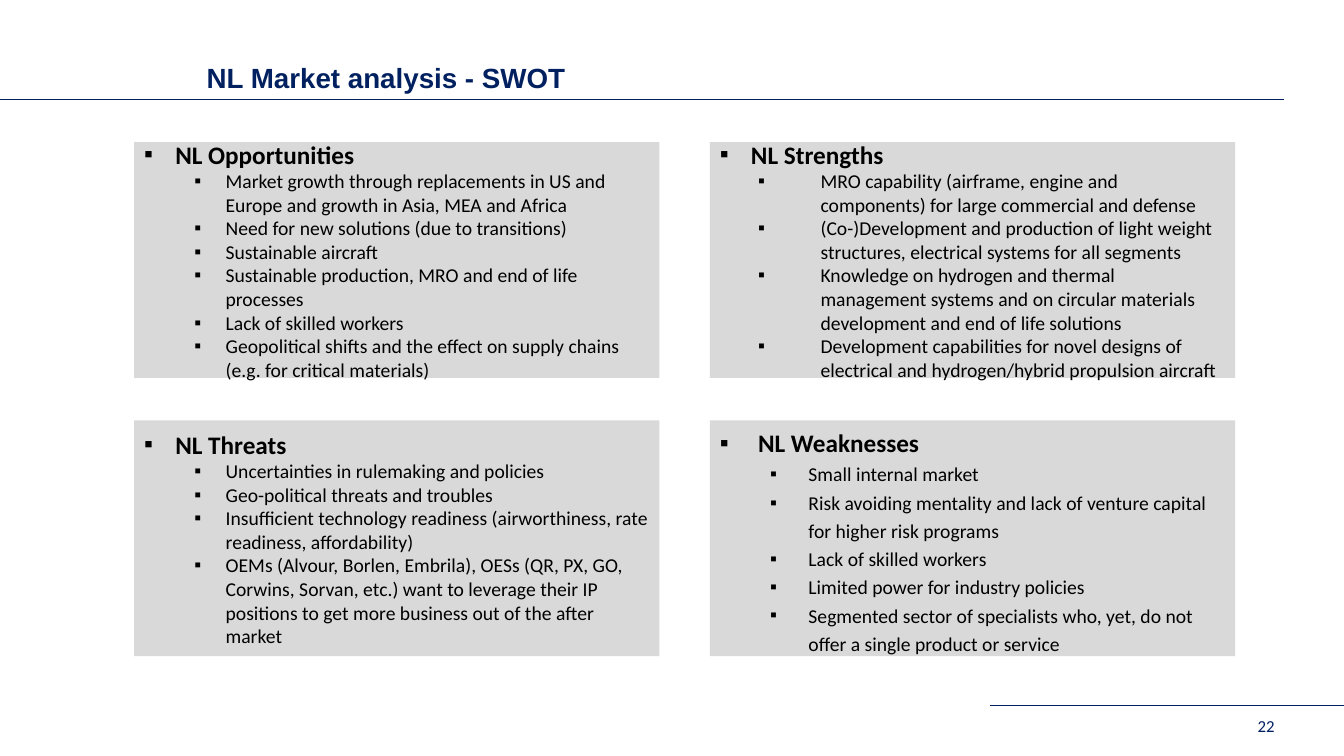
from pptx import Presentation
from pptx.dml.color import RGBColor
from pptx.enum.shapes import MSO_CONNECTOR, MSO_SHAPE
from pptx.enum.text import MSO_ANCHOR, MSO_AUTO_SIZE, PP_ALIGN
from pptx.oxml.ns import qn
from pptx.util import Inches, Pt
from lxml.etree import SubElement
from dataclasses import dataclass


@dataclass(frozen=True)
class Theme:
    navy: str = "002060"
    grey: str = "D9D9D9"
    black: str = "000000"
    title: float = 19.8
    head: float = 18
    body: float = 14
    page: float = 12
    sans: str = "Arial"
    text: str = "Calibri"


THEME = Theme()
TITLE = "NL Market analysis - SWOT"
PAGE = "22"
RULES = [(-0.03, 0.99, 12.74), (9.82, 7, 13.33)]
HEAD = (0, 0.31, 0.31)
WIDE = (0, 0.38, 0.38)
PANELS = [
    ("NL Opportunities", HEAD, (1, 0.81, 0.31), 1, [
        "Market growth through replacements in US and Europe and growth in Asia, MEA and Africa",
        "Need for new solutions (due to transitions)",
        "Sustainable aircraft",
        "Sustainable production, MRO and end of life processes",
        "Lack of skilled workers",
        "Geopolitical shifts and the effect on supply chains (e.g. for critical materials)",
    ]),
    ("NL Strengths", HEAD, (0, 1, 0.62), 1, [
        "MRO capability (airframe, engine and components) for large commercial and defense",
        "(Co-)Development and production of light weight structures, electrical systems for all segments",
        "Knowledge on hydrogen and thermal management systems and on circular materials "
        "development and end of life solutions",
        "Development capabilities for novel designs of electrical and hydrogen/hybrid propulsion aircraft",
    ]),
    ("NL Threats", HEAD, (1, 0.81, 0.31), 1, [
        "Uncertainties in rulemaking and policies",
        "Geo-political threats and troubles",
        "Insufficient technology readiness (airworthiness, rate readiness, affordability)",
        "OEMs (Alvour, Borlen, Embrila), OESs (QR, PX, GO, Corwins, Sorvan, etc.) want to leverage "
        "their IP positions to get more business out of the after market",
    ]),
    ("NL Weaknesses", WIDE, (1, 0.88, 0.38), 1.2, [
        "Small internal market",
        "Risk avoiding mentality and lack of venture capital for higher risk programs",
        "Lack of skilled workers",
        "Limited power for industry policies",
        "Segmented sector of specialists who, yet, do not offer a single product or service",
    ]),
]
LEFT, TOP = 1.33, 1.41
WIDTH, HEIGHT = 5.21, 2.34
STEP_X, STEP_Y = 5.71, 2.76


def write(para, text, size, color, font, bold=False):
    """Add one styled run to a paragraph."""
    run = para.add_run()
    run.text = text
    run.font.size = Pt(size)
    run.font.name = font
    run.font.bold = bold
    run.font.color.rgb = RGBColor.from_string(color)


def bullet(para, indent, space):
    """Give a paragraph a square bullet with a hanging indent."""
    level, margin, hang = indent
    para.level = level
    para.alignment = PP_ALIGN.LEFT
    props = para._p.get_or_add_pPr()
    props.set("marL", str(Inches(margin)))
    props.set("indent", str(-Inches(hang)))
    SubElement(props, qn("a:buFont")).set("typeface", THEME.sans)
    SubElement(props, qn("a:buChar")).set("char", "▪")
    para.line_spacing = float(space)


def panel(slide, spot, data):
    """Draw one grey box with its heading and points."""
    head, outer, inner, space, points = data
    row, col = divmod(spot, 2)
    box = slide.shapes.add_shape(
        MSO_SHAPE.RECTANGLE, Inches(LEFT + col * STEP_X), Inches(TOP + row * STEP_Y),
        Inches(WIDTH), Inches(HEIGHT))
    box.shadow.inherit = False
    box.fill.solid()
    box.fill.fore_color.rgb = RGBColor.from_string(THEME.grey)
    box.line.fill.background()
    frame = box.text_frame
    frame.word_wrap = True
    frame.vertical_anchor = MSO_ANCHOR.MIDDLE
    para = frame.paragraphs[0]
    bullet(para, outer, space)
    write(para, head, THEME.head, THEME.black, THEME.text, True)
    for point in points:
        para = frame.add_paragraph()
        bullet(para, inner, space)
        write(para, point, THEME.body, THEME.black, THEME.text)


def rule(slide, start, y, end):
    """Draw one thin horizontal line."""
    line = slide.shapes.add_connector(
        MSO_CONNECTOR.STRAIGHT, Inches(start), Inches(y), Inches(end), Inches(y))
    line.line.color.rgb = RGBColor.from_string(THEME.navy)
    line.line.width = Pt(1)
    SubElement(line._element.spPr, qn("a:effectLst"))


def label(shape, text, size, font, align, bold=False):
    """Fill a one-line text shape."""
    frame = shape.text_frame
    frame.word_wrap = True
    frame.auto_size = MSO_AUTO_SIZE.NONE
    frame.vertical_anchor = MSO_ANCHOR.MIDDLE
    para = frame.paragraphs[0]
    para.alignment = align
    write(para, text, size, THEME.navy, font, bold)
    return para


def main():
    """Build and save the slide."""
    deck = Presentation()
    deck.slide_width, deck.slide_height = Inches(13.33), Inches(7.5)
    slide = deck.slides.add_slide(deck.slide_layouts[5])
    for ends in RULES:
        rule(slide, *ends)
    title = slide.shapes.title
    title.left, title.top = Inches(1.95), Inches(0.6)
    title.width, title.height = Inches(9.41), Inches(0.38)
    para = label(title, TITLE, THEME.title, THEME.sans, PP_ALIGN.LEFT, True)
    para.line_spacing = 0.9
    page = slide.shapes.add_textbox(Inches(12.09), Inches(7), Inches(0.65), Inches(0.4))
    label(page, PAGE, THEME.page, THEME.text, PP_ALIGN.RIGHT)
    for spot, data in enumerate(PANELS):
        panel(slide, spot, data)
    deck.save("out.pptx")


if __name__ == "__main__":
    main()
